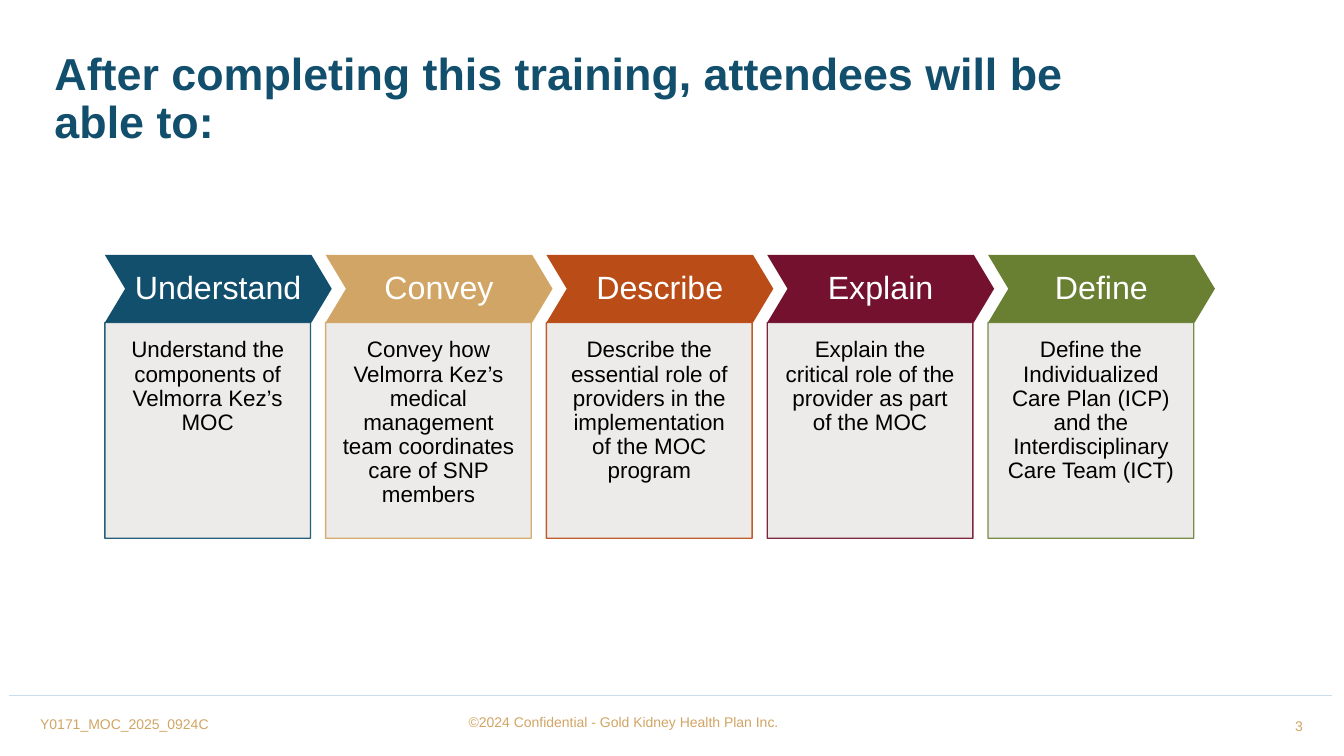
from pptx import Presentation
from pptx.dml.color import RGBColor
from pptx.enum.shapes import MSO_CONNECTOR, MSO_SHAPE
from pptx.enum.text import MSO_ANCHOR, MSO_AUTO_SIZE, PP_ALIGN
from pptx.oxml.ns import qn
from pptx.util import Inches, Pt
from lxml import etree

CHEVRON, RECTANGLE = MSO_SHAPE.CHEVRON, MSO_SHAPE.RECTANGLE
LEFT, CENTER, RIGHT = PP_ALIGN.LEFT, PP_ALIGN.CENTER, PP_ALIGN.RIGHT
TOP, MIDDLE = MSO_ANCHOR.TOP, MSO_ANCHOR.MIDDLE

NAVY, GOLD, PANEL, RULE = "124F6D", "D1A565", "EAE9E7", "CCDDEA"
HEADLINE = "After completing this training, attendees will be able to:"
OBJECTIVES = [
    ("Understand", NAVY, "Understand the components of Velmorra Kez’s MOC"),
    ("Convey", GOLD, "Convey how Velmorra Kez’s medical management team coordinates care of SNP members"),
    ("Describe", "BA4C17", "Describe the essential role of providers in the implementation of the MOC program"),
    ("Explain", "73112E", "Explain the critical role of the provider as part of the MOC"),
    ("Define", "698033", "Define the Individualized Care Plan (ICP) and the Interdisciplinary Care Team (ICT)"),
]
DOCUMENT_CODE = "Y0171_MOC_2025_0924C"
COPYRIGHT = "©2024 Confidential - Gold Kidney Health Plan Inc."
PAGE = "3"

FIRST_LEFT, STEP = 1.04, 2.19
VERB_TOP, VERB_WIDTH, VERB_HEIGHT = 2.53, 2.25, 0.67
DETAIL_WIDTH, DETAIL_HEIGHT = 2.04, 2.14


def rgb(color):
    return RGBColor.from_string(color)


def box(left, top, width, height):
    return [Inches(length) for length in (left, top, width, height)]


def write(holder, text, size, color, align=LEFT, anchor=TOP, bold=False,
          spacing=1.0, insets=(0.1, 0.05, 0.1, 0.05), wrap=True):
    frame = holder.text_frame
    frame.text = text
    frame.word_wrap = wrap
    frame.auto_size = MSO_AUTO_SIZE.NONE
    frame.vertical_anchor = anchor
    (frame.margin_left, frame.margin_top,
     frame.margin_right, frame.margin_bottom) = box(*insets)
    paragraph = frame.paragraphs[0]
    paragraph.alignment = align
    paragraph.line_spacing = spacing
    font = paragraph.runs[0].font
    font.name, font.size, font.bold = "Arial", Pt(size), bold
    font.color.rgb = rgb(color)


def add_panel(slide, kind, place, fill):
    panel = slide.shapes.add_shape(kind, *box(*place))
    panel.shadow.inherit = False
    panel.fill.solid()
    panel.fill.fore_color.rgb = rgb(fill)
    panel.line.fill.background()
    return panel


def add_objective(slide, left, verb, color, detail):
    heading = add_panel(slide, CHEVRON, (left, VERB_TOP, VERB_WIDTH, VERB_HEIGHT), color)
    heading.adjustments[0] = 0.3
    write(heading, verb, 23, "FFFFFF", align=CENTER, anchor=MIDDLE, spacing=0.9,
          insets=(0.08, 0.08, 0.08, 0.08), wrap=False)

    place = (left, VERB_TOP + VERB_HEIGHT, DETAIL_WIDTH, DETAIL_HEIGHT)
    body = add_panel(slide, RECTANGLE, place, PANEL)
    body.line.color.rgb = rgb(color)
    body.line.width = Pt(1)
    for tint in body._element.spPr.iter(qn("a:srgbClr")):
        etree.SubElement(tint, qn("a:alpha"), val="90000")
    write(body, detail, 16, "000000", align=CENTER, spacing=0.9,
          insets=(0.16, 0.16, 0.16, 0.32))


def add_footer(slide):
    rule = slide.shapes.add_connector(MSO_CONNECTOR.STRAIGHT, Inches(0.09), Inches(6.9),
                                      Inches(13.21), Inches(6.9))
    rule.line.color.rgb = rgb(RULE)
    rule.line.width = Pt(0.5)
    etree.SubElement(rule._element.spPr, qn("a:effectLst"))

    notes = [
        (PAGE, (10.49, 7.01, 2.53, 0.38), RIGHT, MIDDLE),
        (COPYRIGHT, (4.55, 7.03, 4.17, 0.27), LEFT, MIDDLE),
        (DOCUMENT_CODE, (0.3, 7.05, 1.88, 0.27), LEFT, TOP),
    ]
    for text, place, align, anchor in notes:
        note = slide.shapes.add_textbox(*box(*place))
        write(note, text, 10, GOLD, align=align, anchor=anchor)


def main():
    deck = Presentation()
    deck.slide_width, deck.slide_height = Inches(13.33), Inches(7.5)
    slide = deck.slides.add_slide(deck.slide_layouts[5])

    title = slide.shapes.title
    title.left, title.top, title.width, title.height = box(0.44, 0.46, 11.14, 1.26)
    write(title, HEADLINE, 32, NAVY, bold=True, spacing=0.9)

    for index, (verb, color, detail) in enumerate(OBJECTIVES):
        add_objective(slide, FIRST_LEFT + index * STEP, verb, color, detail)
    add_footer(slide)
    deck.save("out.pptx")


if __name__ == "__main__":
    main()
